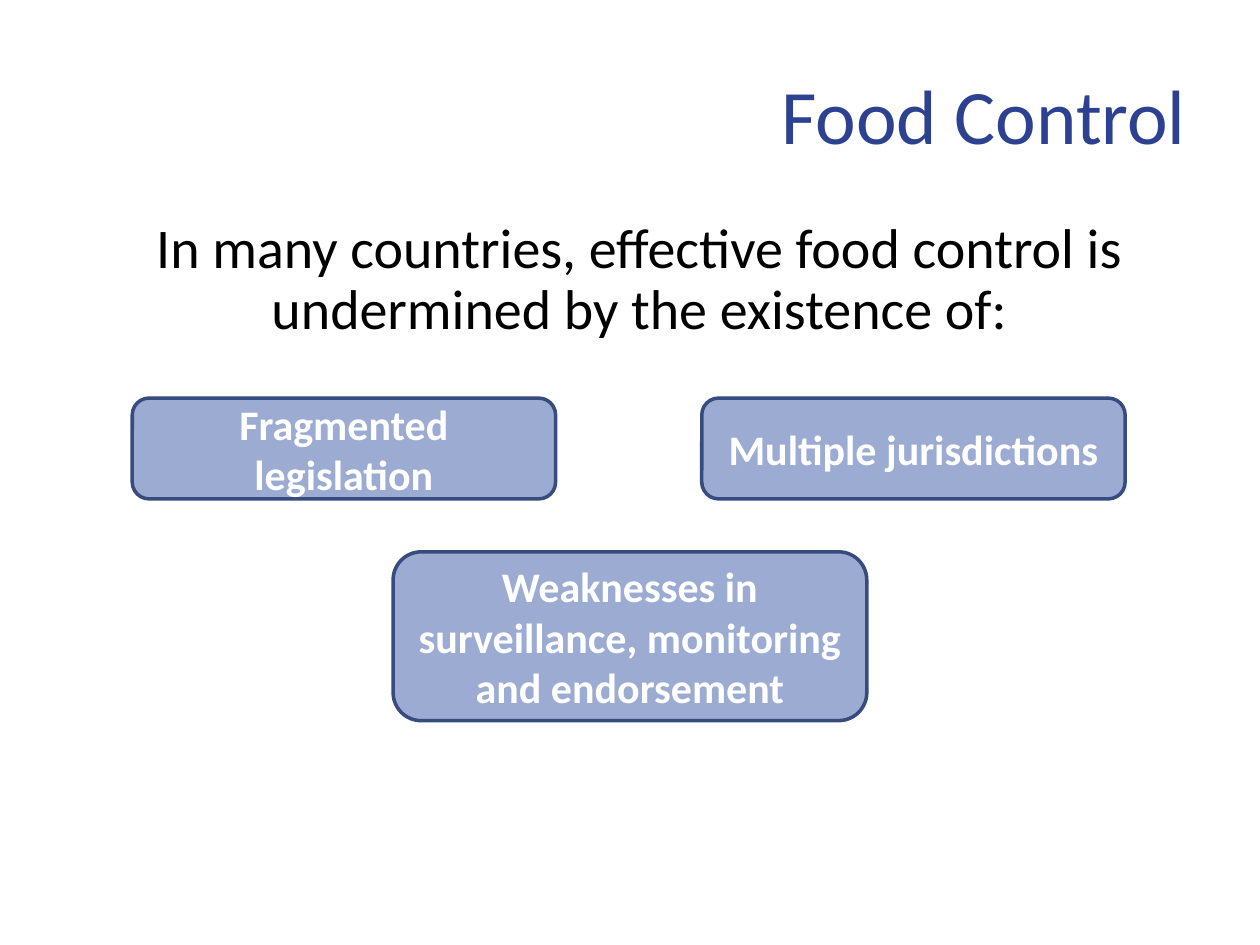
from pptx import Presentation
from pptx.dml.color import RGBColor
from pptx.enum.shapes import MSO_SHAPE as Shape
from pptx.enum.text import MSO_ANCHOR as Anchor, PP_ALIGN as Align
from pptx.oxml.ns import qn
from pptx.util import Inches, Pt
from lxml import etree


def color(hex_code):
    return RGBColor.from_string(hex_code)


class SlideBuilder:
    FONT = "Calibri"
    BLACK, WHITE = "000000", "FFFFFF"
    TITLE_BLUE, FILL_BLUE, EDGE_BLUE = "2D4191", "4A66AC", "374B7F"
    FILL_OPACITY = 55

    def __init__(self, slide):
        self.slide = slide

    def set_wording(self, frame, wording, ink, align, anchor, spacing=1.0, **font_format):
        frame.word_wrap = True
        frame.vertical_anchor = anchor
        paragraph = frame.paragraphs[0]
        paragraph.alignment = align
        paragraph.line_spacing = spacing
        run = paragraph.add_run()
        run.text = wording
        run.font.color.rgb = color(ink)
        for name, value in {"name": self.FONT, **font_format}.items():
            setattr(run.font, name, value)

    def text(self, wording, box, ink, align, anchor, size):
        area = self.slide.shapes.add_textbox(*map(Inches, box))
        self.set_wording(area.text_frame, wording, ink, align, anchor, 0.9, size=Pt(size))

    def card(self, wording, box):
        card = self.slide.shapes.add_shape(Shape.ROUNDED_RECTANGLE, *map(Inches, box))
        card.shadow.inherit = False
        card.fill.solid()
        card.fill.fore_color.rgb = color(self.FILL_BLUE)
        fill_color = card.element.spPr.find(qn("a:solidFill"))[0]
        etree.SubElement(fill_color, qn("a:alpha"), val=str(self.FILL_OPACITY * 1000))
        card.line.color.rgb = color(self.EDGE_BLUE)
        card.line.width = Pt(2)
        self.set_wording(card.text_frame, wording, self.WHITE, Align.CENTER, Anchor.MIDDLE,
                         size=Pt(24), bold=True)


def main():
    deck = Presentation()
    deck.slide_width, deck.slide_height = Inches(10), Inches(7.5)
    page = SlideBuilder(deck.slides.add_slide(deck.slide_layouts[6]))

    # Introduction and title
    page.text("In many countries, effective food control is undermined by the existence of:",
              (0.6, 1.7, 8.95, 1.17), page.BLACK, Align.CENTER, Anchor.TOP, 32)
    page.text("Food Control ", (1.03, 0.22, 8.62, 1.45),
              page.TITLE_BLUE, Align.RIGHT, Anchor.MIDDLE, 44)

    # Two causes side by side
    causes = ["Fragmented legislation", "Multiple jurisdictions"]
    left, step = 1.05, 4.52
    for column, cause in enumerate(causes):
        page.card(cause, (left + column * step, 3.16, 3.36, 0.8))

    # Third cause, centred below
    width = 3.76
    page.card("Weaknesses in surveillance, monitoring and endorsement",
              ((10 - width) / 2, 4.38, width, 1.34))

    deck.save("out.pptx")


if __name__ == "__main__":
    main()
